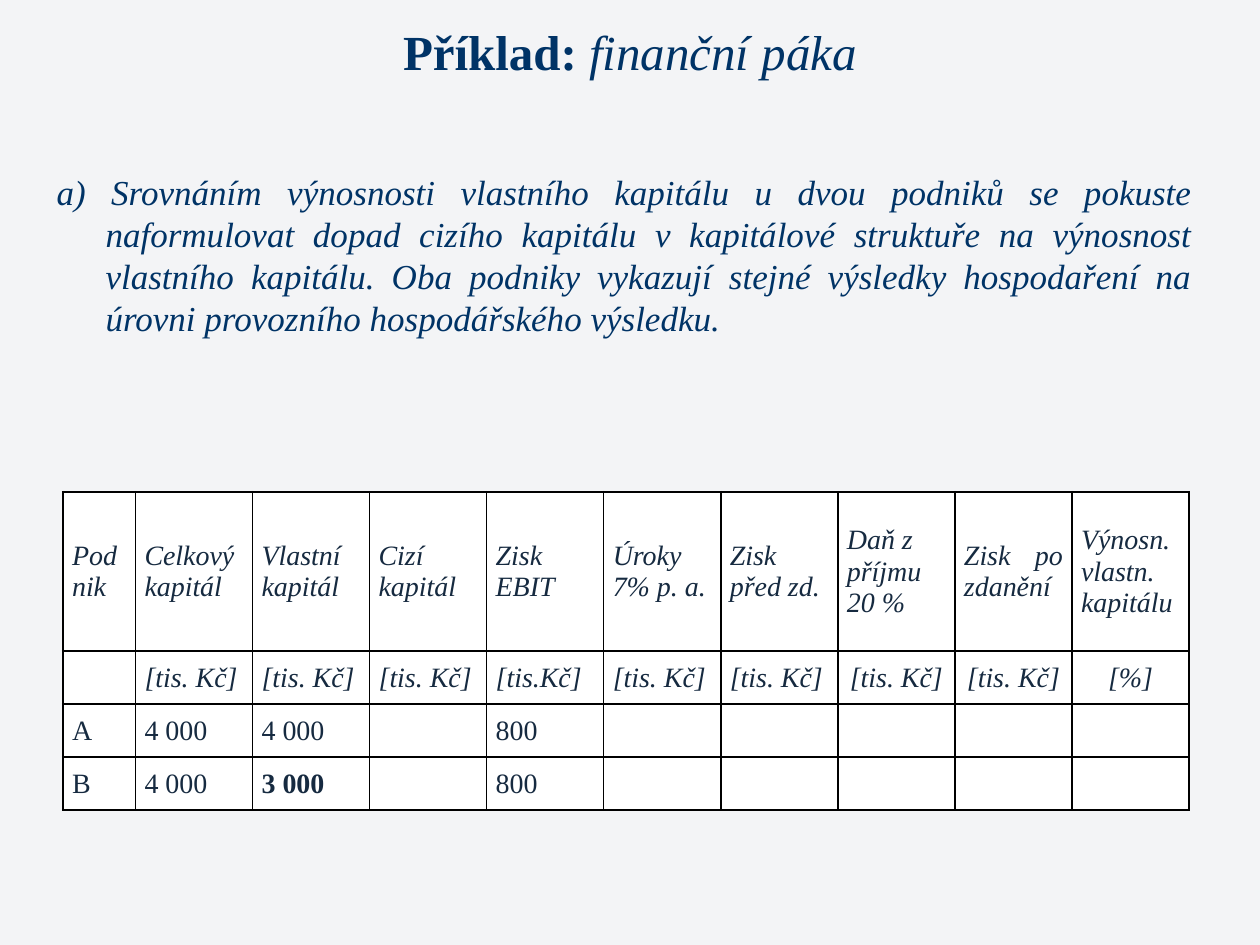
from lxml import etree
from pptx import Presentation
from pptx.dml.color import RGBColor
from pptx.enum.text import MSO_ANCHOR, PP_ALIGN
from pptx.oxml.ns import qn
from pptx.util import Pt

NAVY = RGBColor(0x00, 0x33, 0x66)
INK = RGBColor(0x16, 0x2A, 0x40)
WHITE = RGBColor(0xFF, 0xFF, 0xFF)
BACKGROUND = RGBColor(0xF3, 0xF4, 0xF6)
FONT = "Times New Roman"
THIN, THICK = 1, 1.5


def set_font(font, size, color, bold=False, italic=False):
    font.name, font.size, font.bold, font.italic = FONT, Pt(size), bold, italic
    font.color.rgb = color


def set_borders(cell, widths):
    """Draw black cell borders; widths are points for left, right, top, bottom."""
    tcPr = cell._tc.get_or_add_tcPr()
    for i, (side, width) in enumerate(zip("LRTB", widths)):
        ln = etree.Element(qn(f"a:ln{side}"), w=str(Pt(width)))
        fill = etree.SubElement(ln, qn("a:solidFill"))
        etree.SubElement(fill, qn("a:srgbClr"), val="000000")
        tcPr.insert(i, ln)


prs = Presentation()
prs.slide_width, prs.slide_height = Pt(720), Pt(540)
s = prs.slides.add_slide(prs.slide_layouts[6])
s.background.fill.solid()
s.background.fill.fore_color.rgb = BACKGROUND

# Title
tf = s.shapes.add_textbox(Pt(36), Pt(15), Pt(648), Pt(28)).text_frame
tf.word_wrap = True
tf.vertical_anchor = MSO_ANCHOR.MIDDLE
p = tf.paragraphs[0]
p.alignment = PP_ALIGN.CENTER
for words, bold in (("Příklad: ", True), ("finanční páka", False)):
    r = p.add_run()
    r.text = words
    set_font(r.font, 28, NAVY, bold, not bold)

# Task
tf = s.shapes.add_textbox(Pt(25.2), Pt(93.6), Pt(663), Pt(104.4)).text_frame
tf.word_wrap = True
p = tf.paragraphs[0]
p.text = (
    "a) Srovnáním výnosnosti vlastního kapitálu u dvou podniků se pokuste "
    "naformulovat dopad cizího kapitálu v kapitálové struktuře na výnosnost "
    "vlastního kapitálu. Oba podniky vykazují stejné výsledky hospodaření na "
    "úrovni provozního hospodářského výsledku."
)
p.alignment = PP_ALIGN.JUSTIFY
set_font(p.font, 20, NAVY, italic=True)
pPr = p._p.get_or_add_pPr()
pPr.set("marL", str(Pt(28)))
pPr.set("indent", str(-Pt(28)))

# Table of the two companies
UNIT = "[tis. Kč]"
ROWS = [
    ["Podnik", "Celkový\nkapitál", "Vlastní kapitál", "Cizí kapitál", "Zisk EBIT",
     "Úroky\n7% p. a.", "Zisk před zd.", "Daň z příjmu\n20 %", "Zisk po zdanění",
     "Výnosn. vlastn.\nkapitálu"],
    ["", UNIT, UNIT, UNIT, "[tis.Kč]", UNIT, UNIT, UNIT, UNIT, "[%]"],
    ["A", "4 000", "4 000", "", "800", "", "", "", "", ""],
    ["B", "4 000", "3 000", "", "800", "", "", "", "", ""],
]
HEIGHTS = [90.9, 30.3, 30.3, 30.3]
WIDTHS = [41.4] + [66.92] * 9
TAX_COL, LAST_COL = 7, 9

table = s.shapes.add_table(
    len(ROWS), len(WIDTHS), Pt(36), Pt(281.2), Pt(sum(WIDTHS)), Pt(sum(HEIGHTS))
).table
for column, width in zip(table.columns, WIDTHS):
    column.width = Pt(width)
for row, height in zip(table.rows, HEIGHTS):
    row.height = Pt(height)

for i, row in enumerate(ROWS):
    for j, words in enumerate(row):
        cell = table.cell(i, j)
        cell.fill.solid()
        cell.fill.fore_color.rgb = WHITE
        cell.vertical_anchor = MSO_ANCHOR.MIDDLE
        cell.margin_left = cell.margin_right = Pt(5.2)
        cell.margin_top = cell.margin_bottom = 0
        cell.text = words
        if i == 1 and j >= TAX_COL:
            align = PP_ALIGN.CENTER
        elif i == 1 or (i == 0 and j == TAX_COL):
            align = PP_ALIGN.LEFT
        else:
            align = PP_ALIGN.JUSTIFY
        for p in cell.text_frame.paragraphs:
            p.alignment = align
            set_font(p.font, 16, INK, bold=words == "3 000", italic=i < 2)
        thick = (j == 0, j == LAST_COL, i in (0, 2), i in (1, 3))
        set_borders(cell, [THICK if t else THIN for t in thick])

prs.save("out.pptx")
